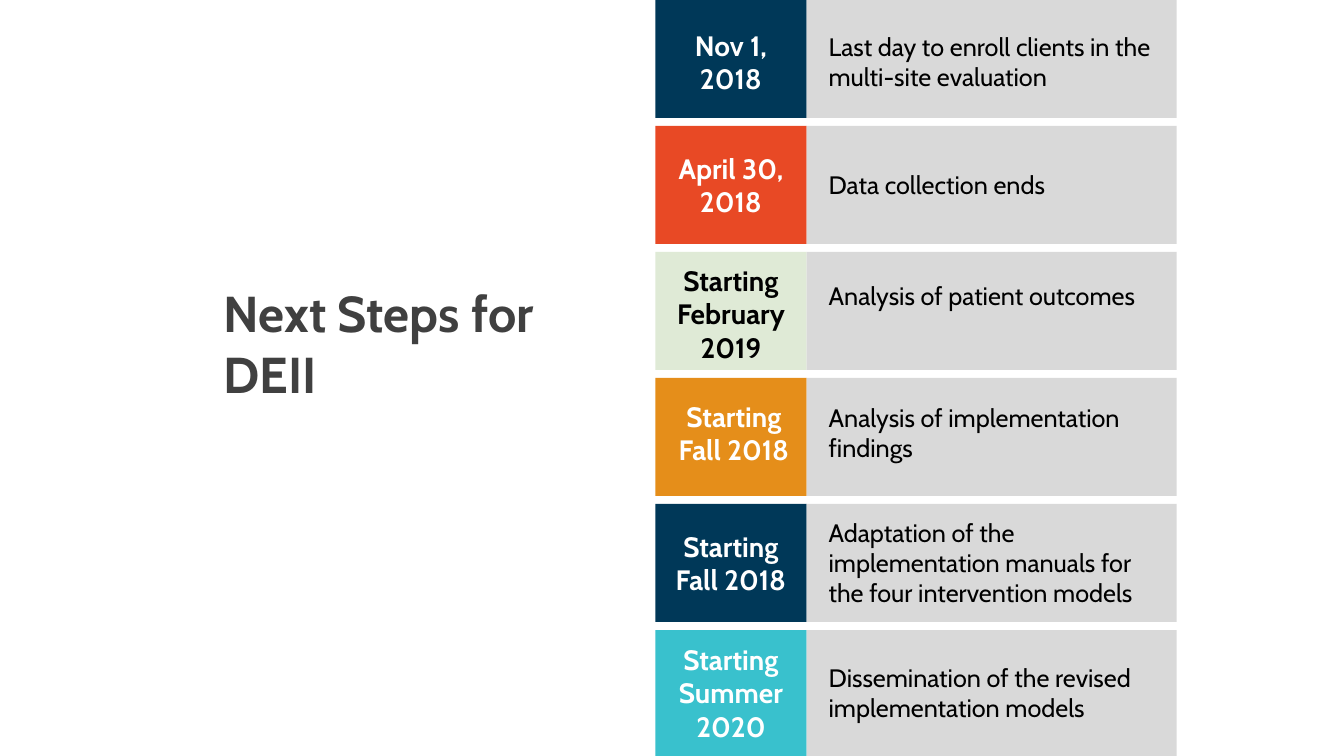
from pptx import Presentation
from pptx import util as u
from pptx.dml.color import RGBColor
from pptx.enum import shapes, text

NAVY = RGBColor(0x00, 0x38, 0x58)
RED = RGBColor(0xE8, 0x49, 0x25)
MINT = RGBColor(0xDF, 0xEA, 0xD6)
ORANGE = RGBColor(0xE5, 0x8E, 0x1A)
TEAL = RGBColor(0x39, 0xC1, 0xCD)
GREY = RGBColor(0xD9, 0xD9, 0xD9)
CHARCOAL = RGBColor(0x40, 0x40, 0x40)
BLACK = RGBColor(0, 0, 0)
WHITE = RGBColor(0xFF, 0xFF, 0xFF)

FONT = "Cabin"
TITLE = "Next Steps for DEII"

# date, tile colour, date colour, (date shift, drop, lines),
# step, (step drop, width, lines)
STEPS = [
    ("Nov 1, 2018", NAVY, WHITE, (0, 0.23, 2),
     "Last day to enroll clients in the multi-site evaluation", (0.26, 3.55, 2)),
    ("April 30, 2018", RED, WHITE, (0, 0.2, 2),
     "Data collection ends", (0.38, 3.38, 1)),
    ("Starting February 2019", MINT, BLACK, (0, 0.06, 3),
     "Analysis of patient outcomes", (0.23, 3.45, 1)),
    ("Starting Fall 2018", ORANGE, WHITE, (0.03, 0.16, 2),
     "Analysis of implementation findings", (0.19, 3.45, 2)),
    ("Starting Fall 2018", NAVY, WHITE, (0, 0.2, 2),
     "Adaptation of the implementation manuals for the four intervention models",
     (0.08, 3.38, 3)),
    ("Starting Summer 2020", TEAL, WHITE, (0, 0.07, 3),
     "Dissemination of the revised implementation models", (0.27, 3.38, 2)),
]

SLIDE_W, SLIDE_H = 13.33, 7.5
PITCH = SLIDE_H / len(STEPS)
GAP = 0.08
DATE_X, DATE_W = 6.5, 1.5
STEP_X, STEP_W = DATE_X + DATE_W, 3.67
STEP_INDENT = 0.12
DATE_LINE, STEP_LINE, MARGINS = 0.335, 0.305, 0.1


def add_tile(page, left, top, width, height, colour):
    tile = page.shapes.add_shape(
        shapes.MSO_SHAPE.RECTANGLE, *map(u.Inches, (left, top, width, height)))
    tile.shadow.inherit = False
    tile.fill.solid()
    tile.fill.fore_color.rgb = colour
    tile.line.fill.background()


def add_text(page, words, left, top, width, height, size, colour,
             bold=False, align=text.PP_ALIGN.LEFT):
    box = page.shapes.add_textbox(*map(u.Inches, (left, top, width, height)))
    frame = box.text_frame
    frame.word_wrap = True
    frame.auto_size = text.MSO_AUTO_SIZE.SHAPE_TO_FIT_TEXT
    para = frame.paragraphs[0]
    para.alignment = align
    span = para.add_run()
    span.text = words
    span.font.name = FONT
    span.font.size = u.Pt(size)
    span.font.bold = bold
    span.font.color.rgb = colour


def main():
    deck = Presentation()
    deck.slide_width, deck.slide_height = u.Inches(SLIDE_W), u.Inches(SLIDE_H)
    page = deck.slides.add_slide(deck.slide_layouts[6])

    add_text(page, TITLE, 2.12, 2.75, 3.45, 1.31, 36, CHARCOAL, bold=True)

    for row, (date, tile, ink, date_fit, step, step_fit) in enumerate(STEPS):
        top = row * PITCH
        last = row == len(STEPS) - 1
        height = PITCH if last else PITCH - GAP
        add_tile(page, DATE_X, top, DATE_W, height, tile)
        add_tile(page, STEP_X, top, STEP_W, height, GREY)

        shift, drop, lines = date_fit
        add_text(page, date, DATE_X + shift, top + drop, DATE_W,
                 MARGINS + lines * DATE_LINE, 20, ink,
                 bold=True, align=text.PP_ALIGN.CENTER)
        drop, width, lines = step_fit
        add_text(page, step, STEP_X + STEP_INDENT, top + drop, width,
                 MARGINS + lines * STEP_LINE, 18, BLACK)

    deck.save("out.pptx")


if __name__ == "__main__":
    main()
